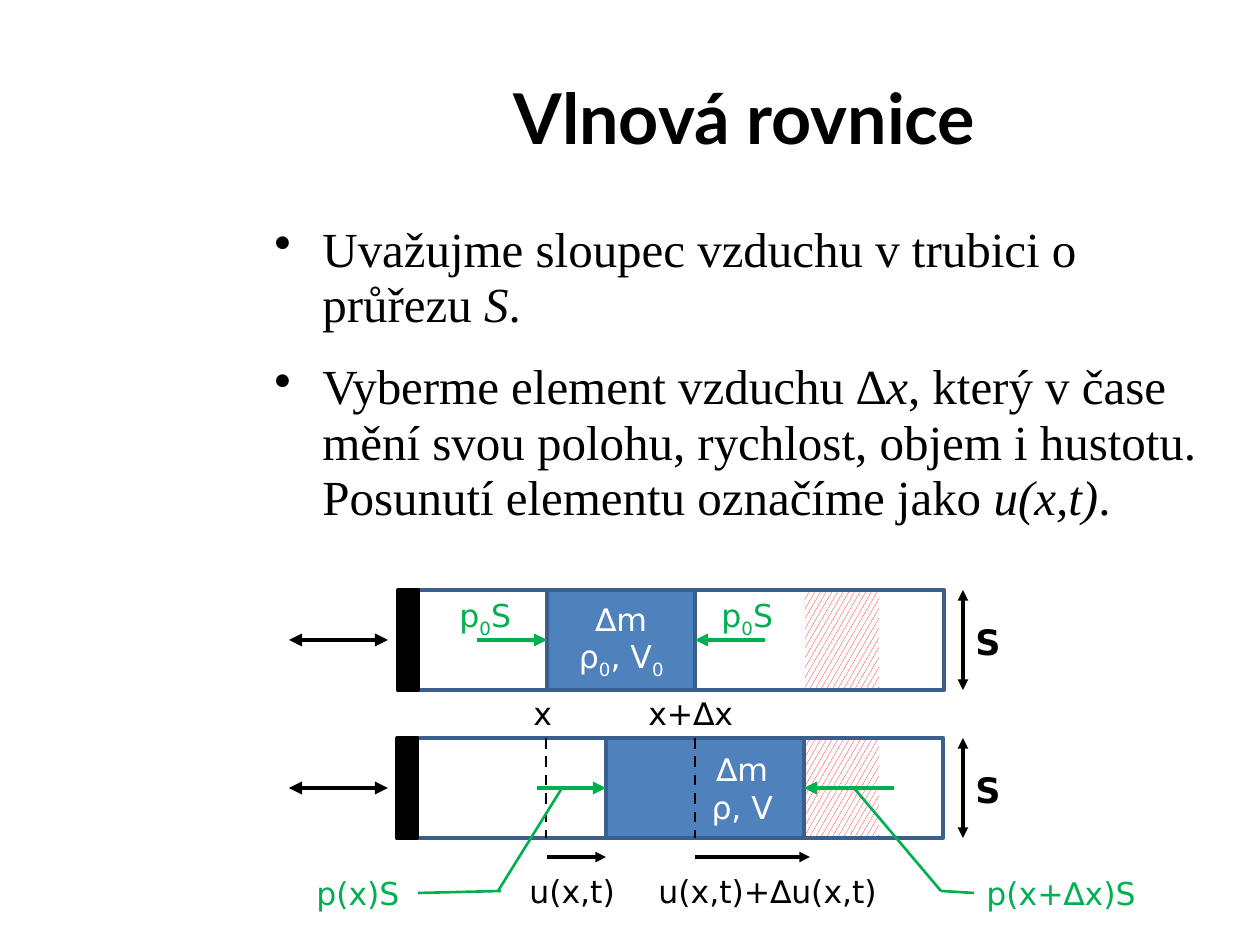
from lxml import etree
from pptx import Presentation
from pptx import util as u
from pptx.dml.color import RGBColor
from pptx.enum import dml, shapes, text
from pptx.oxml.ns import qn

SCALE = 914400 / 126
BLACK = RGBColor(0x00, 0x00, 0x00)
WHITE = RGBColor(0xFF, 0xFF, 0xFF)
GREEN = RGBColor(0x00, 0xB0, 0x50)
RED = RGBColor(0xFF, 0x00, 0x00)
BLUE = RGBColor(0x4F, 0x81, 0xBD)
NAVY = RGBColor(0x3A, 0x5F, 0x8C)
SANS = "DejaVu Sans"
CENTER = text.PP_ALIGN.CENTER
HIGH = 100  # height of the tube


def px(*vals):
    return [u.Emu(round(v * SCALE)) for v in vals]


def write(frame, lines, size=18, color=BLACK, font=SANS, bold=False,
          align=None, mark="sub", bullet=False, gap=0, space=None):
    """Fill a frame; parts between bars are subscript or italic, as mark says."""
    for i, line in enumerate(lines):
        para = frame.paragraphs[0] if i == 0 else frame.add_paragraph()
        if bullet:
            props = para._p.get_or_add_pPr()
            indent = px(48)[0]
            props.set("marL", str(indent))
            props.set("indent", str(-indent))
            etree.SubElement(props, qn("a:buChar")).set("char", "•")
        para.alignment = align
        if space:
            para.line_spacing = space
        if i and gap:
            para.space_before = u.Pt(gap)
        for j, part in enumerate(line.split("|")):
            if not part:
                continue
            run = para.add_run()
            run.text = part
            face = run.font
            face.size, face.name, face.bold = u.Pt(size), font, bold
            face.color.rgb = color
            if j % 2 and mark == "italic":
                face.italic = True
            elif j % 2:
                run._r.get_or_add_rPr().set("baseline", "-25000")


def label(slide, lines, x, y, w, h=50, wrap=False, **form):
    frame = slide.shapes.add_textbox(*px(x, y, w, h)).text_frame
    frame.word_wrap = wrap
    write(frame, lines, **form)
    return frame


def block(slide, x, y, w, fill=None, line=None, width=2):
    rect = slide.shapes.add_shape(shapes.MSO_SHAPE.RECTANGLE,
                                  *px(x, y, w, HIGH))
    rect.shadow.inherit = False
    if fill is None:
        rect.fill.background()
    else:
        rect.fill.solid()
        rect.fill.fore_color.rgb = fill
    if line is None:
        rect.line.fill.background()
    else:
        rect.line.color.rgb = line
        rect.line.width = u.Pt(width)
    return rect


def hatch(slide, y):
    fill = block(slide, 805, y, 74).fill
    fill.patterned()
    fill.pattern = dml.MSO_PATTERN.LARGE_CONFETTI
    fill.fore_color.rgb = RED
    fill.back_color.rgb = WHITE


def link(slide, x1, y1, x2, y2, color=BLACK, width=2, ends=(), dash=False):
    """Draw a straight line; ends names the tips that carry an arrowhead."""
    line = slide.shapes.add_connector(shapes.MSO_CONNECTOR.STRAIGHT,
                                      *px(x1, y1, x2, y2))
    line.line.color.rgb = color
    line.line.width = u.Pt(width)
    if dash:
        line.line.dash_style = dml.MSO_LINE.DASH
    props = line.line._get_or_add_ln()
    for end in ends:
        etree.SubElement(props, qn("a:" + end)).set("type", "triangle")
    etree.SubElement(line._element.spPr, qn("a:effectLst"))
    return line


def tube(slide, x, y, cell_x, cell_w, lines, inset, tails):
    """Draw a tube with piston, air element, forces and size arrows."""
    mid = y + HIGH / 2
    both = ("headEnd", "tailEnd")
    hatch(slide, y)
    block(slide, x, y, 546, line=NAVY, width=2.5)
    cell = block(slide, cell_x, y, cell_w, BLUE, NAVY)
    frame = cell.text_frame
    frame.margin_left = px(inset)[0]
    frame.vertical_anchor = text.MSO_ANCHOR.MIDDLE
    write(frame, lines, color=WHITE, align=CENTER)
    block(slide, x, y, 20, BLACK, BLACK)
    link(slide, 289, mid, 388, mid, width=2.5, ends=both)
    link(slide, 963, y, 963, y + HIGH, ends=both)
    label(slide, ["S"], 963, y + 24, 50, 55, size=20, bold=True)
    sides = ((1, cell_x), (3, cell_x + cell_w))
    for tail, (side, edge) in zip(tails, sides):
        force = link(slide, tail, mid, edge, mid, GREEN, 2.5, ["tailEnd"])
        force.end_connect(cell, side)


def main():
    deck = Presentation()
    deck.slide_width, deck.slide_height = px(1260, 945)
    slide = deck.slides.add_slide(deck.slide_layouts[6])

    title = label(slide, ["Vlnová rovnice"], 262, 38, 965, 158, wrap=True,
                  size=40, font="Lato", bold=True, align=CENTER)
    title.vertical_anchor = text.MSO_ANCHOR.MIDDLE
    label(slide, [
        "Uvažujme sloupec vzduchu v trubici o průřezu |S|.",
        "Vyberme element vzduchu |∆x|, který v čase mění svou polohu, "
        "rychlost, objem i hustotu. Posunutí elementu označíme jako |u(x,t)|.",
    ], 262, 217, 966, 330, wrap=True, size=28, font="Times New Roman",
        mark="italic", bullet=True, gap=15.4, space=0.94)

    tube(slide, 398, 590, 547, 148, ["∆m", "ρ|0|, V|0|"], 13, (477, 765))
    tube(slide, 397, 738, 606, 198, ["∆m", "ρ, V"], 87, (537, 894))

    for x in (546, 695):
        link(slide, x, 738, x, 738 + HIGH, width=1.5, dash=True)
    for start, end in ((547, 606), (695, 810)):
        link(slide, start, 857, end, 857, ends=["tailEnd"])
    for points in ((418, 893, 501, 891), (498, 891, 562, 788),
                   (974, 893, 941, 891), (941, 891, 854, 788)):
        link(slide, *points, color=GREEN, width=1.5)

    for name, x, y, w, color in (
            ("p|0|S", 447, 590, 81, GREEN),
            ("p|0|S", 709, 590, 81, GREEN),
            ("x", 521, 688, 44, BLACK),
            ("x+∆x", 636, 688, 112, BLACK),
            ("u(x,t)", 517, 866, 117, BLACK),
            ("u(x,t)+∆u(x,t)", 646, 866, 258, BLACK),
            ("p(x)S", 304, 868, 115, GREEN),
            ("p(x+∆x)S", 974, 868, 183, GREEN)):
        label(slide, [name], x, y, w, color=color)

    deck.save("out.pptx")


if __name__ == "__main__":
    main()
